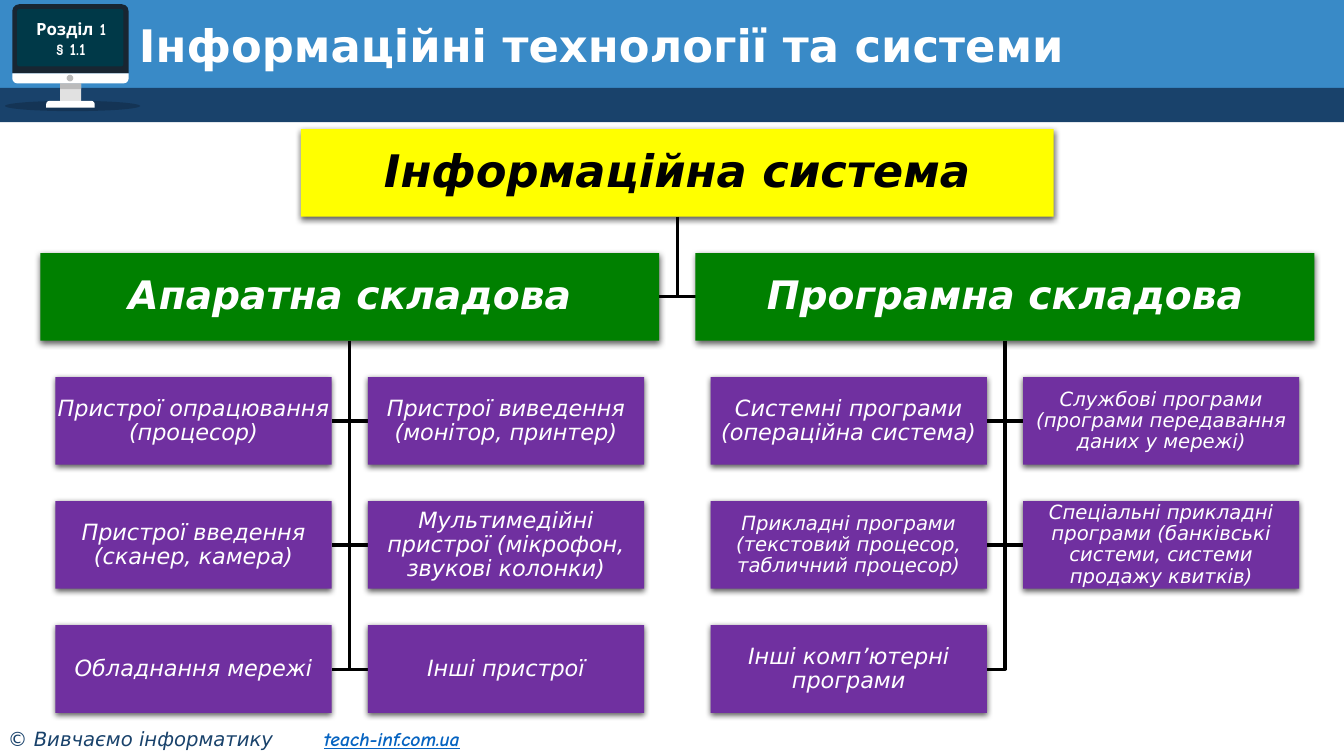
from lxml import etree
from pptx import Presentation
from pptx import util as u
from pptx.dml import color
from pptx.enum import shapes, text
from pptx.oxml import ns

HEADING = "Інформаційні технології та системи"
BADGE = ["Розділ 1", "§ 1.1"]
CREDIT = "© Вивчаємо інформатику\t"
SITE = "teach-inf.com.ua"
ROOT = "Інформаційна система"
BRANCHES = [
    ("Апаратна складова", [
        ("Пристрої опрацювання (процесор)", "leaf"),
        ("Пристрої виведення (монітор, принтер)", "leaf"),
        ("Пристрої введення (сканер, камера)", "leaf"),
        ("Мультимедійні пристрої (мікрофон, звукові колонки)", "leaf"),
        ("Обладнання мережі", "leaf"),
        ("Інші пристрої", "leaf"),
    ]),
    ("Програмна складова", [
        ("Системні програми (операційна система)", "leaf"),
        ("Службові програми (програми передавання даних у мережі)", "small_leaf"),
        ("Прикладні програми (текстовий процесор, табличний процесор)", "small_leaf"),
        ("Спеціальні прикладні програми (банківські системи, системи продажу квитків)",
         "small_leaf"),
        ("Інші комп’ютерні програми", "leaf"),
    ]),
]
KIND = shapes.MSO_SHAPE
MONITOR = [
    ("floor", KIND.OVAL, (3.6, 72, 96.5, 7.4), []),
    ("case", KIND.ROUND_2_SAME_RECTANGLE, (8.8, 3, 83.1, 49.4), [0.1, 0]),
    ("white", KIND.ROUND_2_SAME_RECTANGLE, (8.8, 52.4, 83.1, 7.2), [0, 0.5]),
    ("stand", KIND.RECTANGLE, (43, 59.6, 15, 12.4), []),
    ("grey", KIND.RECTANGLE, (43, 59.6, 15, 4), []),
    ("white", KIND.ROUND_2_SAME_RECTANGLE, (33, 72, 34.7, 5), [0.5, 0]),
    ("grey", KIND.OVAL, (47.6, 53.4, 4.8, 4.8), []),
    ("screen", KIND.ROUNDED_RECTANGLE, (12.3, 6.5, 75.8, 41), [0.04]),
]
THEME = {
    "colours": {
        "header": "398AC7", "navy": "19426B", "link": "0563C1", "white": "FFFFFF",
        "black": "000000", "floor": "000000", "case": "182632", "stand": "E1E1E1",
        "grey": "BBBBBB", "screen": "003948", "root": "FFFF00", "branch": "008000",
        "leaf": "7030A0",
    },
    "fonts": {
        "heading": ("white", {"name": "DejaVu Sans", "size": u.Pt(32), "bold": True}),
        "badge": ("white", {"name": "Comic Neue", "size": u.Pt(12), "bold": True}),
        "credit": ("navy", {"name": "DejaVu Sans", "size": u.Pt(14), "italic": True}),
        "site": ("link", {"name": "Comic Neue", "size": u.Pt(14), "bold": True,
                          "italic": True, "underline": True}),
        "root": ("black", {"name": "DejaVu Sans", "size": u.Pt(32), "bold": True,
                           "italic": True}),
        "branch": ("white", {"name": "DejaVu Sans", "size": u.Pt(28), "bold": True,
                             "italic": True}),
        "leaf": ("white", {"name": "DejaVu Sans", "size": u.Pt(16), "italic": True}),
        "small_leaf": ("white", {"name": "DejaVu Sans", "size": u.Pt(14), "italic": True}),
    },
    "line": 2.25,
}
WIDTH, HEIGHT = 960, 540
BOX_HEIGHT, ROW_PITCH, TREE_TOP = 62.6, 88.6, 92.2
ROOT_WIDTH, BRANCH_WIDTH, LEAF_WIDTH, GAP = 537.8, 442.1, 197.3, 25.9
BRANCH_LEFT = 28.8
SIDES = ("left", "right", "top", "bottom")


def colour(name):
    return color.RGBColor.from_string(THEME["colours"][name])


def points(*values):
    return [u.Pt(value) for value in values]


def add_block(page, kind, area, fill):
    block = page.shapes.add_shape(kind, *points(*area))
    block.shadow.inherit = False
    block.fill.solid()
    block.fill.fore_color.rgb = colour(fill)
    block.line.fill.background()
    return block


def write(box, paragraphs, inset=None, anchor="MIDDLE", align="CENTER", spacing=None):
    frame = box.text_frame
    frame.word_wrap = True
    frame.vertical_anchor = text.MSO_ANCHOR[anchor]
    if inset is not None:
        for side in SIDES:
            setattr(frame, f"margin_{side}", u.Pt(inset))
    for index, spans in enumerate(paragraphs):
        para = frame.add_paragraph() if index else frame.paragraphs[0]
        para.alignment = text.PP_ALIGN[align]
        para.line_spacing = spacing
        for wording, style in spans:
            span = para.add_run()
            span.text = wording
            ink, formats = THEME["fonts"][style]
            for key, value in formats.items():
                setattr(span.font, key, value)
            span.font.color.rgb = colour(ink)


def add_effect_colour(parent, alpha):
    tint = etree.SubElement(parent, ns.qn("a:srgbClr"), val=THEME["colours"]["black"])
    etree.SubElement(tint, ns.qn("a:alpha"), val=str(alpha * 1000))


def add_node(page, left, row, width, wording, level, style, inset):
    area = (left, TREE_TOP + row * ROW_PITCH, width, BOX_HEIGHT)
    node = add_block(page, KIND.RECTANGLE, area, level)
    effects = node._element.spPr.find(ns.qn("a:effectLst"))
    shade = etree.SubElement(effects, ns.qn("a:outerShdw"), blurRad=str(u.Pt(4.5)),
                             dist=str(u.Pt(1.5)), dir="5400000", rotWithShape="0")
    add_effect_colour(shade, 63)
    write(node, [[(wording, style)]], inset, spacing=0.9)


def add_elbow(page, trunk, parent_row, end, row):
    start = TREE_TOP + parent_row * ROW_PITCH + BOX_HEIGHT
    level = TREE_TOP + row * ROW_PITCH + BOX_HEIGHT / 2
    outline = page.shapes.build_freeform(*points(trunk, start))
    outline.add_line_segments([points(trunk, level), points(end, level)], close=False)
    elbow = outline.convert_to_shape()
    elbow.shadow.inherit = False
    elbow.fill.background()
    elbow.line.color.rgb = colour("black")
    elbow.line.width = u.Pt(THEME["line"])


def add_header(page):
    add_block(page, KIND.RECTANGLE, (0, 0, WIDTH, 65.5), "header")
    add_block(page, KIND.RECTANGLE, (0, 62.8, WIDTH, 24.4), "navy")
    for fill, kind, area, corners in MONITOR:
        part = add_block(page, kind, area, fill)
        for index, corner in enumerate(corners):
            part.adjustments[index] = corner
        if fill == "floor":
            tint = part._element.spPr.find(ns.qn("a:solidFill"))[0]
            etree.SubElement(tint, ns.qn("a:alpha"), val="20000")
    badge = page.shapes.add_textbox(*points(9.4, 6.5, 82.8, 42.5))
    write(badge, [[(line, "badge")] for line in BADGE])
    heading = page.shapes.add_textbox(*points(92.2, 13, 712.8, 41.8))
    write(heading, [[(HEADING, "heading")]], align="LEFT", spacing=0.9)


def add_footer(page):
    footer = page.shapes.add_textbox(*points(-1.4, 515.5, 376.6, 24.5))
    properties = footer.text_frame.paragraphs[0]._p.get_or_add_pPr()
    stops = etree.SubElement(properties, ns.qn("a:tabLst"))
    etree.SubElement(stops, ns.qn("a:tab"), pos=str(u.Pt(225.6)), algn="l")
    write(footer, [[(CREDIT, "credit"), (SITE, "site")]], anchor="TOP", align="LEFT")


def add_tree(page):
    centre = BRANCH_LEFT + BRANCH_WIDTH + GAP / 2
    nodes = [(centre - ROOT_WIDTH / 2, 0, ROOT_WIDTH, ROOT, "root", "root", 1.6)]
    elbows = []
    for number, (branch, leaves) in enumerate(BRANCHES):
        left = BRANCH_LEFT + number * (BRANCH_WIDTH + GAP)
        trunk = left + BRANCH_WIDTH / 2
        nodes.append((left, 1, BRANCH_WIDTH, branch, "branch", "branch", 1.4))
        elbows.append((centre, 0, centre + (number - 0.5) * GAP, 1))
        for index, (wording, style) in enumerate(leaves):
            row, column = divmod(index, 2)
            end = trunk + (column - 0.5) * GAP
            leaf_left = end if column else end - LEAF_WIDTH
            nodes.append((leaf_left, row + 2, LEAF_WIDTH, wording, "leaf", style, 0.7))
            elbows.append((trunk, 1, end, row + 2))
    for elbow in elbows:
        add_elbow(page, *elbow)
    for node in nodes:
        add_node(page, *node)


def main():
    deck = Presentation()
    deck.slide_width, deck.slide_height = points(WIDTH, HEIGHT)
    page = deck.slides.add_slide(deck.slide_layouts[6])
    add_header(page)
    add_footer(page)
    add_tree(page)
    deck.save("out.pptx")


if __name__ == "__main__":
    main()
